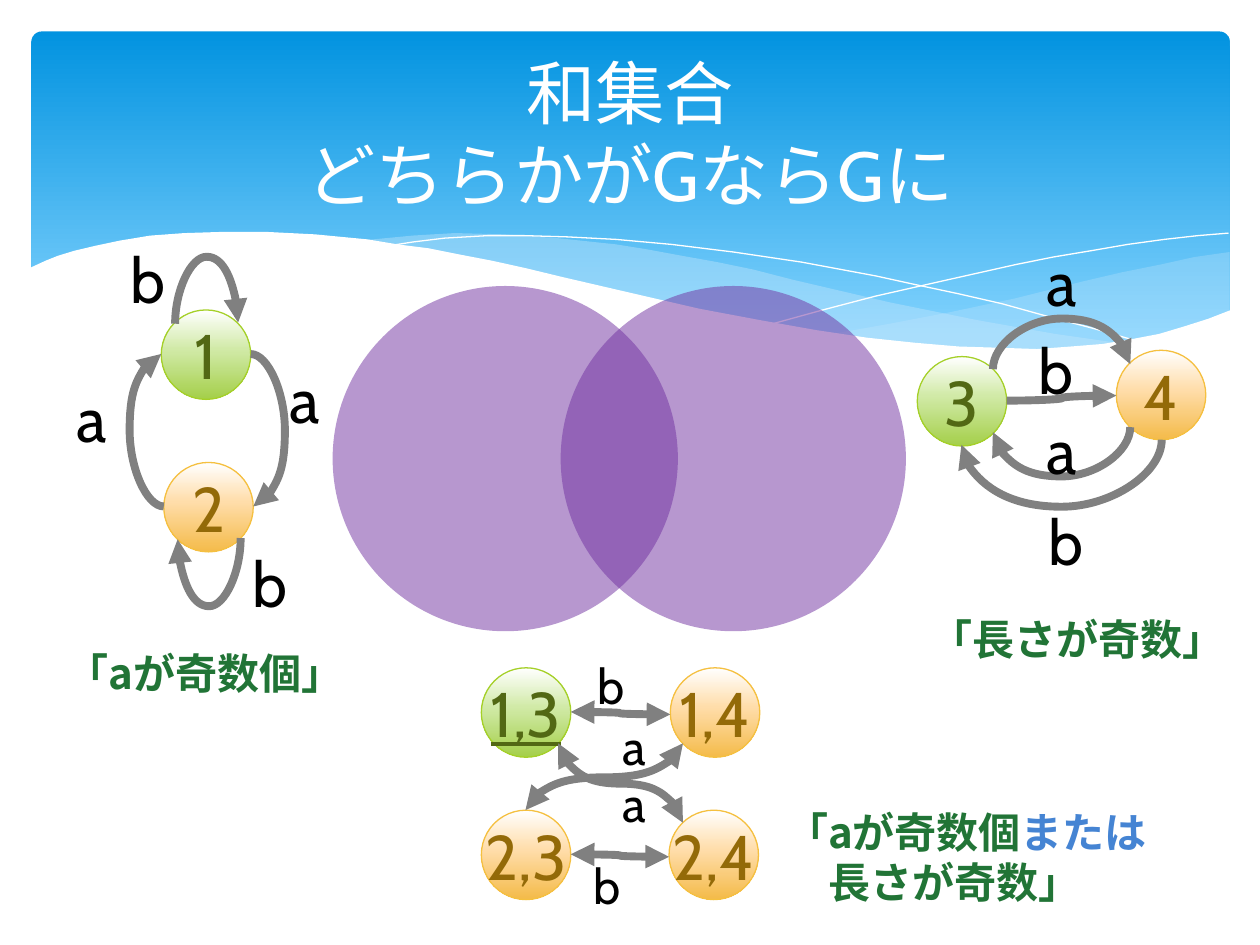
from dataclasses import dataclass

from lxml.etree import SubElement
from pptx import Presentation
from pptx.dml.color import RGBColor
from pptx.enum.shapes import MSO_CONNECTOR, MSO_SHAPE
from pptx.enum.text import MSO_ANCHOR, PP_ALIGN
from pptx.oxml.ns import qn
from pptx.util import Inches, Pt

LATIN, JAPANESE = "Cabin", "Noto Sans CJK JP"
GREEN, BLUE, GREY = "217436", "4584D3", "808080"
Point = tuple[float, float]
Span = tuple[str, str]


@dataclass(frozen=True)
class Palette:
    stops: tuple[tuple[int, str], ...]
    line: str
    text: str


@dataclass(frozen=True)
class Node:
    text: str
    left: float
    top: float
    palette: Palette
    underline: bool = False


@dataclass(frozen=True)
class Edge:
    start: Point
    end: Point
    bend: float
    vertical: bool = False
    both_ways: bool = False


@dataclass(frozen=True)
class Wave:
    points: tuple[Point, ...]
    colour: str
    opacity: int = 100
    outline: bool = False


@dataclass(frozen=True)
class Label:
    text: str
    left: float
    top: float
    size: int = 36


START = Palette(((0, "FFFFFF"), (44, "D1EAA7"), (100, "A4CF4A")), "A5D028", "526814")
OTHER = Palette(((0, "FFFFFF"), (44, "FFDDAA"), (100, "F4BB4A")), "F5C040", "936A08")

WAVES = [
    Wave(((9.76, 2), (9.48, 2.04), (9.21, 2.1), (8.91, 2.16), (8.61, 2.23), (8.05, 2.37),
          (7.53, 2.48), (7.06, 2.57), (6.61, 2.65), (6.91, 2.69), (7.32, 2.74), (7.69, 2.77),
          (8.03, 2.78), (8.35, 2.77), (8.63, 2.75), (8.89, 2.72), (9.13, 2.67), (9.35, 2.62),
          (9.63, 2.52), (9.76, 2.47)), "C6E7FC", 29),
    Wave(((8.93, 2.73), (8.37, 2.65), (7.75, 2.54), (7.06, 2.4), (6.29, 2.22), (5.98, 2.14),
          (5.69, 2.08), (5.41, 2.03), (5.14, 1.98), (4.89, 1.94), (4.42, 1.89), (3.99, 1.86),
          (3.61, 1.85), (3.28, 1.87), (2.86, 1.91), (3.23, 1.96), (3.62, 2.03), (4.04, 2.11),
          (4.49, 2.22), (4.91, 2.32), (5.3, 2.4), (5.66, 2.48), (6.01, 2.55), (6.34, 2.61),
          (6.65, 2.66), (6.95, 2.7), (7.36, 2.75), (7.73, 2.77), (8.07, 2.78), (8.48, 2.77),
          (8.76, 2.75)), "C6E7FC", 40),
    Wave(((3.09, 1.95), (3.28, 1.92), (3.53, 1.89), (3.87, 1.87), (4.16, 1.87), (4.5, 1.88),
          (4.89, 1.9), (5.33, 1.94), (5.82, 2), (6.36, 2.08), (6.95, 2.19), (7.27, 2.26),
          (7.6, 2.33), (7.95, 2.41), (8.31, 2.51), (8.69, 2.61), (9.07, 2.72)),
         "FFFFFF", outline=True),
    Wave(((6.13, 2.57), (6.53, 2.46), (6.95, 2.35), (7.48, 2.23), (8.06, 2.1), (8.36, 2.04),
          (8.66, 1.99), (8.95, 1.94), (9.24, 1.9), (9.51, 1.87), (9.75, 1.85)),
         "FFFFFF", outline=True),
    Wave(((9.77, 2.46), (9.59, 2.53), (9.4, 2.59), (9.2, 2.65), (8.99, 2.69), (8.75, 2.73),
          (8.5, 2.75), (8.23, 2.77), (7.93, 2.76), (7.61, 2.75), (7.26, 2.72), (6.88, 2.68),
          (6.48, 2.62), (6.03, 2.54), (5.55, 2.45), (5.03, 2.33), (4.47, 2.2), (4.18, 2.13),
          (3.91, 2.07), (3.65, 2.02), (3.4, 1.97), (3.16, 1.94), (2.92, 1.9), (2.5, 1.86),
          (2.11, 1.84), (1.77, 1.84), (1.46, 1.85), (1.19, 1.87), (0.95, 1.91), (0.76, 1.95),
          (0.59, 1.99), (0.46, 2.03), (0.36, 2.07), (0.23, 2.13), (0.23, 3.29), (9.77, 3.29)),
         "FFFFFF"),
]
NODES = [
    Node("1", 1.28, 2.46, START), Node("2", 1.3, 3.67, OTHER),
    Node("3", 7.28, 2.83, START), Node("4", 8.86, 2.78, OTHER),
    Node("2,3", 3.82, 6.43, OTHER), Node("1,3", 3.82, 5.3, START, True),
    Node("2,4", 5.31, 6.43, OTHER), Node("1,4", 5.32, 5.3, OTHER),
]
EDGES = [
    Edge((1.99, 2.81), (2.01, 4.02), 2.26),
    Edge((1.3, 4.02), (1.28, 2.81), 1.03),
    Edge((1.39, 2.57), (1.89, 2.56), 2.03, vertical=True),
    Edge((1.91, 4.27), (1.41, 4.28), 4.82, vertical=True),
    Edge((7.88, 2.93), (8.97, 2.89), 2.53, vertical=True),
    Edge((8.97, 3.39), (7.88, 3.43), 3.78, vertical=True),
    Edge((7.99, 3.18), (8.86, 3.14), 8.43),
    Edge((9.22, 3.49), (7.63, 3.53), 4.02, vertical=True),
    Edge((4.53, 6.78), (5.31, 6.8), 4.92, both_ways=True),
    Edge((4.53, 5.65), (5.32, 5.67), 4.92, both_ways=True),
    Edge((4.43, 5.9), (5.42, 6.53), 6.22, vertical=True, both_ways=True),
    Edge((4.17, 6.43), (5.42, 5.9), 6.17, vertical=True, both_ways=True),
]
LABELS = [
    Label("a", 0.51, 2.96), Label("a", 2.2, 2.81), Label("b", 0.94, 1.86),
    Label("b", 1.91, 4.27), Label("a", 8.21, 1.88), Label("a", 8.21, 3.22),
    Label("b", 8.14, 2.58), Label("b", 8.22, 3.94), Label("a", 4.84, 5.64, 28),
    Label("b", 4.64, 5.15, 28), Label("b", 4.61, 6.74, 28), Label("a", 4.84, 6.09, 28),
]


def set_all(target, values: dict) -> None:
    for name, value in values.items():
        setattr(target, name, value)


def paint(fill, colour: str, opacity: int = 100) -> None:
    fill.solid()
    fill.fore_color.rgb = RGBColor.from_string(colour)
    if opacity < 100:
        SubElement(fill._xPr.find(f".//{qn('a:srgbClr')}"), qn("a:alpha"), val=str(opacity * 1000))


def shade(shape, stops: tuple[tuple[int, str], ...]) -> None:
    shape.fill.gradient()
    shape.fill.gradient_angle = 270
    stop_list = shape._element.spPr.find(f".//{qn('a:gsLst')}")
    stop_list.clear()
    for position, colour in stops:
        stop = SubElement(stop_list, qn("a:gs"), pos=str(position * 1000))
        SubElement(stop, qn("a:srgbClr"), val=colour)


def write(frame, spans: list[Span], size: float, font: str, spacing=None,
          align=PP_ALIGN.LEFT, **styles) -> None:
    para = frame.paragraphs[0]
    set_all(para, {"alignment": align, "line_spacing": spacing})
    for position, (text, colour) in enumerate(spans):
        for number, piece in enumerate(text.split("\n")):
            if number:
                para.add_line_break()
            span = para.add_run()
            span.text = piece
            set_all(span.font, {"size": Pt(size), "name": font, **styles})
            paint(span.font.fill, colour)
            SubElement(span._r.get_or_add_rPr(), qn("a:ea"), typeface=JAPANESE)


def add_box(page, left: float, top: float, width: float, height: float, spans: list[Span],
            size: float, font: str, anchor=MSO_ANCHOR.TOP, **styles) -> None:
    box = page.shapes.add_textbox(Inches(left), Inches(top), Inches(width), Inches(height))
    set_all(box.text_frame, {"word_wrap": True, "vertical_anchor": anchor})
    write(box.text_frame, spans, size, font, **styles)


def add_plain_shape(page, kind, left: float, top: float, width: float, height: float):
    shape = page.shapes.add_shape(kind, Inches(left), Inches(top), Inches(width), Inches(height))
    shape.shadow.inherit = False
    shape.line.fill.background()
    return shape


def add_wave(page, wave: Wave) -> None:
    first, *rest = [(Inches(x), Inches(y)) for x, y in wave.points]
    builder = page.shapes.build_freeform(*first)
    builder.add_line_segments(rest, close=not wave.outline)
    shape = builder.convert_to_shape()
    shape.shadow.inherit = False
    if wave.outline:
        shape.fill.background()
        shape.line.width = Pt(0)
        paint(shape.line.fill, wave.colour)
    else:
        shape.line.fill.background()
        paint(shape.fill, wave.colour, wave.opacity)


def add_node(page, node: Node) -> None:
    shape = add_plain_shape(page, MSO_SHAPE.OVAL, node.left, node.top, 0.71, 0.71)
    shade(shape, node.palette.stops)
    shape.line.width = Pt(0.75)
    paint(shape.line.fill, node.palette.line)
    set_all(shape.text_frame, {"word_wrap": len(node.text) == 1,
                               "vertical_anchor": MSO_ANCHOR.MIDDLE})
    write(shape.text_frame, [(node.text, node.palette.text)], 36, LATIN,
          align=PP_ALIGN.CENTER, underline=node.underline)


def add_edge(page, edge: Edge) -> None:
    (x0, y0), (x1, y1) = edge.start, edge.end
    axis = 1 if edge.vertical else 0
    bend = (edge.bend - edge.start[axis]) / (edge.end[axis] - edge.start[axis])
    if edge.vertical:
        middle_x, middle_y = (x0 + x1) / 2, (y0 + y1) / 2
        half_x, half_y = (y1 - y0) / 2, (x0 - x1) / 2
        x0, x1 = middle_x - half_x, middle_x + half_x
        y0, y1 = middle_y - half_y, middle_y + half_y
    line = page.shapes.add_connector(MSO_CONNECTOR.CURVE, *map(Inches, (x0, y0, x1, y1)))
    line.line.width = Pt(4.5)
    paint(line.line.fill, GREY)
    properties = line._element.spPr
    if edge.vertical:
        properties.find(qn("a:xfrm")).set("rot", "5400000")
    SubElement(properties.find(f".//{qn('a:avLst')}"), qn("a:gd"),
               name="adj1", fmla=f"val {round(bend * 100000)}")
    for end in ("a:headEnd", "a:tailEnd")[0 if edge.both_ways else 1:]:
        SubElement(properties.find(qn("a:ln")), qn(end), type="triangle")
    SubElement(properties, qn("a:effectLst"))


def main() -> None:
    deck = Presentation()
    set_all(deck, {"slide_width": Inches(10), "slide_height": Inches(7.5)})
    page = deck.slides.add_slide(deck.slide_layouts[6])

    banner = add_plain_shape(page, MSO_SHAPE.ROUNDED_RECTANGLE, 0.25, 0.25, 9.51, 2.7)
    banner.adjustments[0] = 0.03
    shade(banner, ((0, "0293E0"), (90, "83D3FE")))
    for wave in WAVES:
        add_wave(page, wave)
    for left in (2.64, 4.45):
        paint(add_plain_shape(page, MSO_SHAPE.OVAL, left, 2.27, 2.74, 2.74).fill, "7030A0", 50)
    add_box(page, 0.5, 0.37, 9, 1.37, [("和集合\nどちらかがGならGに", "FFFFFF")], 39.6, LATIN,
            MSO_ANCHOR.MIDDLE, align=PP_ALIGN.CENTER, spacing=Pt(47))

    for node in NODES:
        add_node(page, node)
    for edge in EDGES:
        add_edge(page, edge)
    for label in LABELS:
        add_box(page, label.left, label.top, 0.44, label.size / 50, [(label.text, "000000")],
                label.size, LATIN)

    caption = {"size": 24, "font": JAPANESE, "bold": True, "spacing": Pt(28.8)}
    add_box(page, 0.43, 5.09, 2.43, 0.5, [("「aが奇数個」", GREEN)], **caption)
    add_box(page, 7.29, 4.82, 2.67, 0.5, [("「長さが奇数」", GREEN)], **caption)
    add_box(page, 6.14, 6.35, 3.58, 0.91, [("「aが奇数個", GREEN), ("または\n\u3000", BLUE),
                                           ("長さが奇数」", GREEN)], **caption)
    deck.save("out.pptx")


if __name__ == "__main__":
    main()
